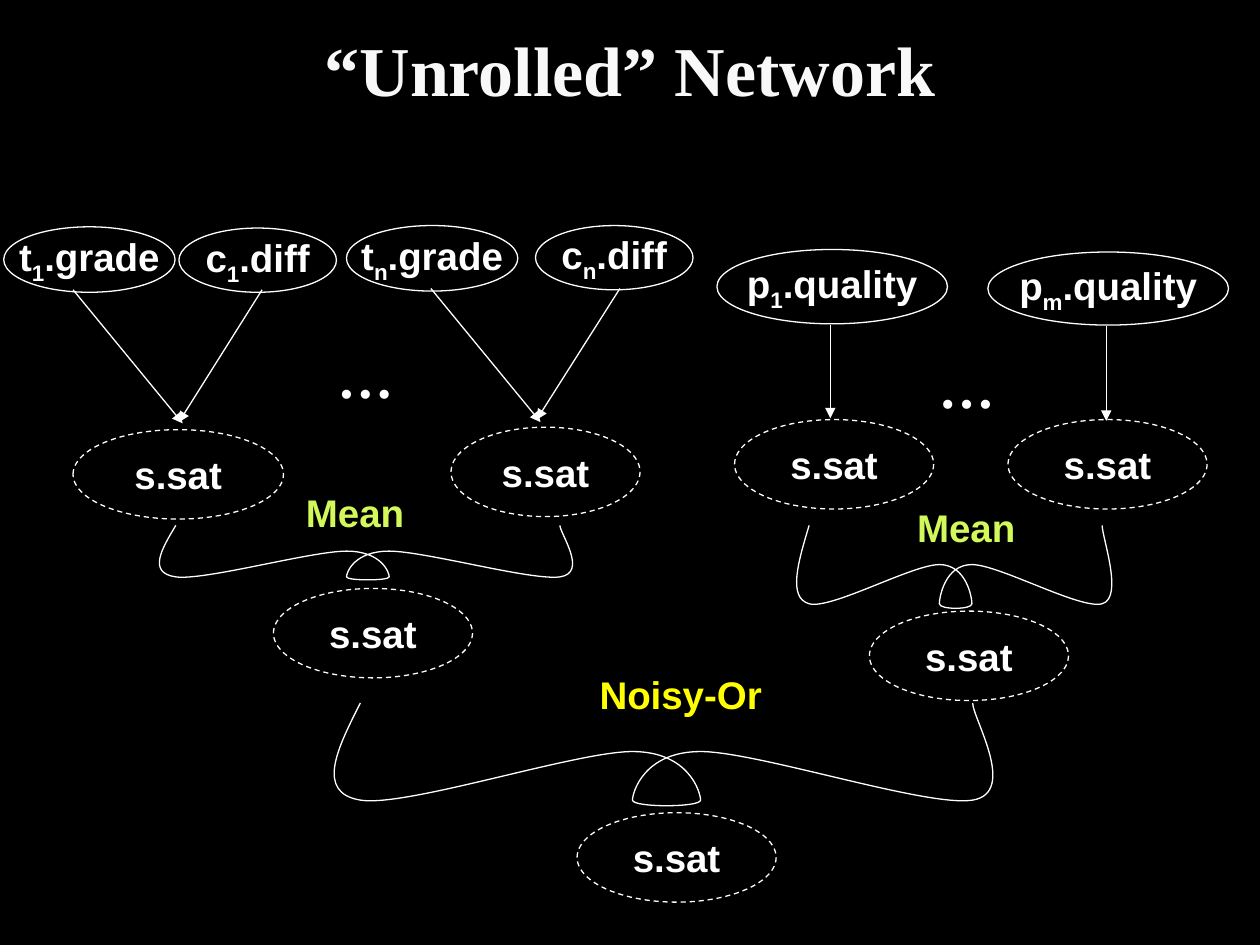
from lxml import etree
from pptx import Presentation
from pptx.dml.color import RGBColor
from pptx.enum.dml import MSO_LINE
from pptx.enum.shapes import MSO_CONNECTOR, MSO_SHAPE
from pptx.enum.text import MSO_ANCHOR, MSO_AUTO_SIZE, PP_ALIGN
from pptx.oxml.ns import qn
from pptx.util import Inches, Pt

ELLIPSE = MSO_SHAPE.OVAL
STRAIGHT = MSO_CONNECTOR.STRAIGHT
DASH = MSO_LINE.DASH
CENTER, LEFT = PP_ALIGN.CENTER, PP_ALIGN.LEFT
MIDDLE, TOP = MSO_ANCHOR.MIDDLE, MSO_ANCHOR.TOP
GROW = MSO_AUTO_SIZE.SHAPE_TO_FIT_TEXT

WHITE, BLACK = "FFFFFF", "000000"
LABEL = {"size": Pt(22), "name": "Arial", "bold": True}
DOTS = {"size": Pt(32), "name": "Times New Roman", "bold": True}
TITLE = {"size": Pt(40), "name": "Times New Roman", "bold": True}

VARIABLES = [
    (0.03, 1.8, 1.36, 0.52, ("t", "1", ".grade")),
    (1.42, 1.81, 1.25, 0.51, ("c", "1", ".diff")),
    (2.75, 1.79, 1.36, 0.52, ("t", "n", ".grade")),
    (4.25, 1.79, 1.25, 0.51, ("c", "n", ".diff")),
    (5.69, 1.98, 1.83, 0.59, ("p", "1", ".quality")),
    (7.84, 2, 1.91, 0.58, ("p", "m", ".quality")),
]
SATISFACTIONS = [
    (0.58, 3.41, 1.67), (3.58, 3.39, 1.5), (5.83, 3.33, 1.58), (8, 3.33, 1.58),
    (2.17, 4.67, 1.58), (6.9, 4.85, 1.58), (4.58, 6.45, 1.58),
]
ARROWS = [
    (0.58, 2.3, 1.45, 3.36), (2.08, 2.3, 1.42, 3.35),
    (3.42, 2.29, 4.29, 3.35), (4.92, 2.29, 4.26, 3.33),
    (6.59, 2.58, 6.59, 3.32), (8.78, 2.59, 8.78, 3.34),
]
AGGREGATIONS = [(1.17, 4.17, 3.5, 0.44), (6.25, 4.17, 2.67, 0.67), (2.5, 5.58, 5.58, 0.83)]
CAPTIONS = [
    (2.33, 3.83, 0.99, 0.47, "Mean", "D2F85A", LABEL),
    (7.18, 3.95, 0.98, 0.47, "Mean", "D2F85A", LABEL),
    (4.66, 5.28, 1.51, 0.47, "Noisy-Or", "FFFF00", LABEL),
    (2.58, 2.67, 0.65, 0.64, "…", WHITE, DOTS),
    (7.35, 2.75, 0.65, 0.64, "…", WHITE, DOTS),
]
CURVE_GRID = (62, 28)
CURVE_POINTS = [
    (4, 0), (2, 12), (0, 24), (4, 26), (8, 28), (23, 13), (28, 13),
    (33, 13), (34, 24), (34, 26), (34, 28), (28, 28), (28, 26),
    (28, 24), (29, 13), (34, 13), (39, 13), (54, 28), (58, 26),
    (62, 24), (58, 4), (58, 0),
]


def color(value):
    """Return the colour for a hex string."""
    return RGBColor.from_string(value)


def write_text(shape, parts, text_color, formats, align=CENTER, anchor=MIDDLE, wrap=False):
    """Write text parts into a shape, with the second part as a subscript."""
    frame = shape.text_frame
    frame.word_wrap = wrap
    frame.vertical_anchor = anchor
    paragraph = frame.paragraphs[0]
    paragraph.alignment = align
    for index, part in enumerate(parts):
        run = paragraph.add_run()
        run.text = part
        run.font.color.rgb = color(text_color)
        for name, value in formats.items():
            setattr(run.font, name, value)
        if index == 1:
            run.font._element.set("baseline", "-25000")


def style_line(shape):
    """Give a shape or connector the thin white line."""
    shape.line.color.rgb = color(WHITE)
    shape.line.width = Pt(0.75)


def add_node(slide, box, parts, dashed=False):
    """Add an unfilled ellipse with a label."""
    shape = slide.shapes.add_shape(ELLIPSE, *map(Inches, box))
    shape.shadow.inherit = False
    shape.fill.background()
    style_line(shape)
    if dashed:
        shape.line.dash_style = DASH
    write_text(shape, parts, WHITE, LABEL)


def add_arrow(slide, ends):
    """Add a straight connector with a triangle at its end."""
    connector = slide.shapes.add_connector(STRAIGHT, *map(Inches, ends))
    style_line(connector)
    etree.SubElement(connector.line._get_or_add_ln(), qn("a:tailEnd"), type="triangle")
    etree.SubElement(connector._element.spPr, qn("a:effectLst"))


def add_aggregation(slide, left, top, width, height):
    """Add the looping curve that joins several nodes into one."""
    columns, rows = CURVE_GRID
    scale = (Inches(width) / columns, Inches(height) / rows)
    builder = slide.shapes.build_freeform(*CURVE_POINTS[0], scale=scale)
    builder.add_line_segments(CURVE_POINTS[1:], close=False)
    shape = builder.convert_to_shape(Inches(left), Inches(top))
    shape.shadow.inherit = False
    shape.fill.background()
    style_line(shape)
    lines = list(shape._element.iter(qn("a:lnTo")))
    outline = lines[0].getparent()
    for start in range(0, len(lines), 3):
        curve = etree.SubElement(outline, qn("a:cubicBezTo"))
        for line in lines[start:start + 3]:
            curve.append(line[0])
            outline.remove(line)


def add_caption(slide, left, top, width, height, text, text_color, formats):
    """Add a free-standing label that grows with its text."""
    box = slide.shapes.add_textbox(*map(Inches, (left, top, width, height)))
    write_text(box, [text], text_color, formats, align=LEFT, anchor=TOP)
    box.text_frame.auto_size = GROW


def add_title(slide, text):
    """Add the centred slide title."""
    box = slide.shapes.add_textbox(*map(Inches, (0.5, -0.08, 9, 1.25)))
    write_text(box, [text], "F8F8F8", TITLE, wrap=True)


def main():
    """Build the slide and save it."""
    presentation = Presentation()
    presentation.slide_width = Inches(10)
    presentation.slide_height = Inches(7.5)
    slide = presentation.slides.add_slide(presentation.slide_layouts[6])
    slide.background.fill.solid()
    slide.background.fill.fore_color.rgb = color(BLACK)
    add_title(slide, "“Unrolled” Network")
    for *box, parts in VARIABLES:
        add_node(slide, box, parts)
    for left, top, width in SATISFACTIONS:
        add_node(slide, (left, top, width, 0.71), ["s.sat"], dashed=True)
    for ends in ARROWS:
        add_arrow(slide, ends)
    for box in AGGREGATIONS:
        add_aggregation(slide, *box)
    for caption in CAPTIONS:
        add_caption(slide, *caption)
    presentation.save("out.pptx")


if __name__ == "__main__":
    main()
